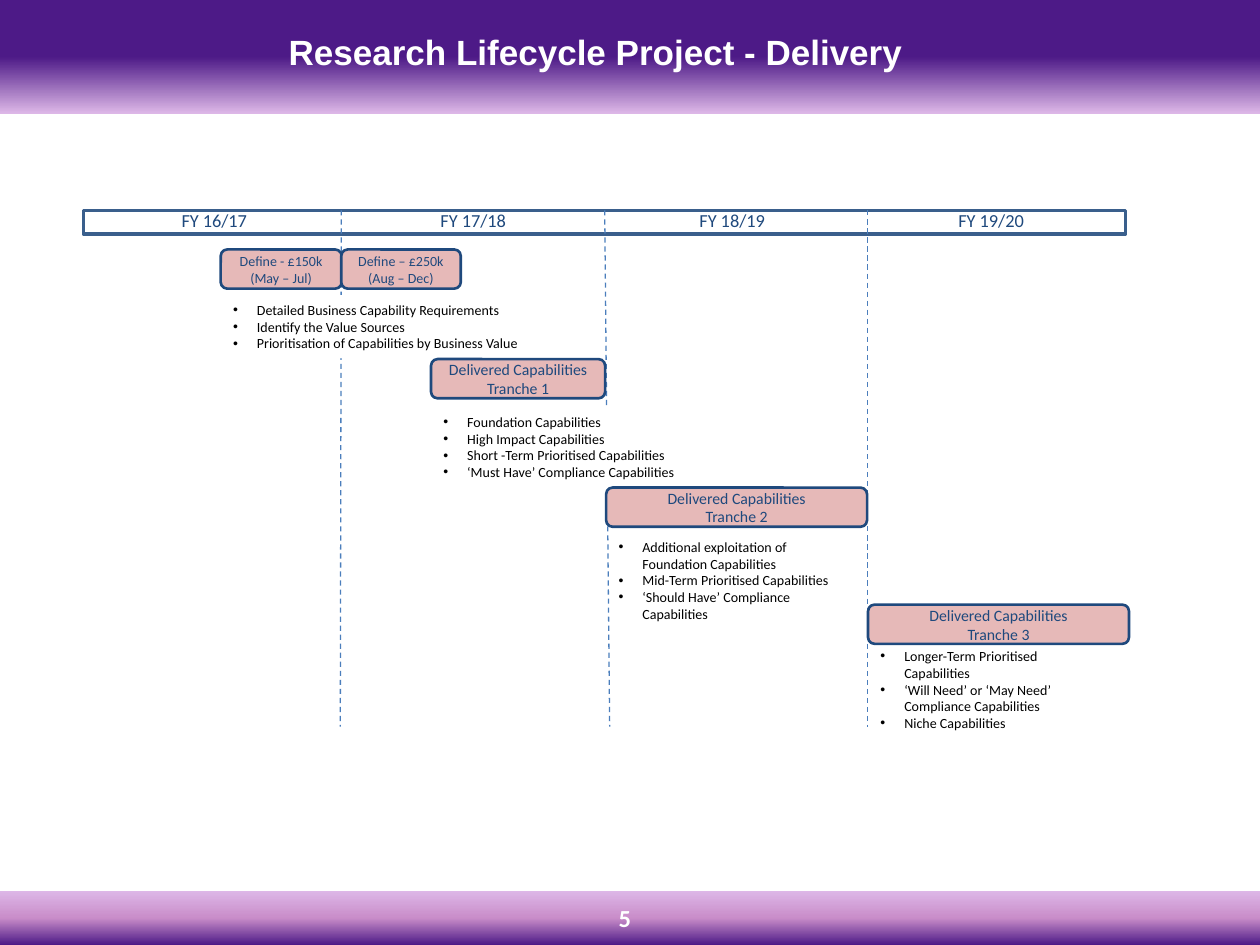
from copy import deepcopy

from lxml import etree
from pptx import Presentation
from pptx import util as u
from pptx.dml.color import RGBColor
from pptx.enum import dml, shapes, text
from pptx.oxml import ns

# Content: positions and sizes in centimetres
TITLE = "Research Lifecycle Project - Delivery"
PAGE_NUMBER = "5"
YEARS = ["FY 16/17", "FY 17/18", "FY 18/19", "FY 19/20"]
DIVIDERS = [(6.88, 6.86), (12.19, 12.29), (17.49, 17.49)]  # x at top, x at bottom
BARS = [  # top, height, gradient stops
    (17.96, 1.09, [(0, "DDB7E7"), (0.5, "C98DC9"), (1, "4D1A87")]),
    (0, 2.29, [(0, "4D1A87"), (0.5, "4D1A87"), (1, "DDB7E7")]),
]
STAGES = [  # left, top, width, font size, lines
    (4.45, 5.03, 2.44, 8, ["Define - £150k (May – Jul)"]),
    (6.88, 5.03, 2.41, 8, ["Define – £250k (Aug – Dec)"]),
    (8.69, 7.24, 3.51, 9, ["Delivered Capabilities", "Tranche 1"]),
    (12.22, 9.83, 5.26, 9, ["Delivered Capabilities", "Tranche 2"]),
    (17.5, 12.19, 5.26, 9, ["Delivered Capabilities", "Tranche 3"]),
]
NOTES = [  # left, top, width, height, fill, bullets
    (4.45, 5.95, 7.04, 1.27, "FFFFFF", [
        "Detailed Business Capability Requirements",
        "Identify the Value Sources",
        "Prioritisation of Capabilities by Business Value"]),
    (8.69, 8.21, 5.21, 1.63, "FFFFFF", [
        "Foundation Capabilities",
        "High Impact Capabilities",
        "Short -Term Prioritised Capabilities",
        "‘Must Have’ Compliance Capabilities"]),
    (12.22, 10.73, 4.85, 2.31, None, [
        "Additional exploitation of Foundation Capabilities",
        "Mid-Term Prioritised Capabilities",
        "‘Should Have’ Compliance Capabilities"]),
    (17.5, 12.93, 4.85, 2.31, None, [
        "Longer-Term Prioritised Capabilities",
        "‘Will Need’ or ‘May Need’ Compliance Capabilities",
        "Niche Capabilities"]),
]
NAVY, PINK, WHITE, BLACK = "1F497D", "E6B9B8", "FFFFFF", "000000"
TIMELINE_TOP, TIMELINE_BOTTOM, BAND_HEIGHT = 4.24, 14.65, 0.48
YEAR_LEFT, YEAR_TOP, YEAR_PITCH = 1.88, 4.09, 5.22
BULLET_INDENT = u.Cm(0.48)


def color(value):
    return RGBColor.from_string(value)


def add_box(page, kind, left, top, width, height, fill=None, line=None, weight=1.5):
    box = page.shapes.add_shape(kind, *map(u.Cm, (left, top, width, height)))
    box.shadow.inherit = False
    if fill:
        box.fill.solid()
        box.fill.fore_color.rgb = color(fill)
    else:
        box.fill.background()
    if line:
        box.line.color.rgb = color(line)
        box.line.width = u.Pt(weight)
    else:
        box.line.fill.background()
    return box


def add_gradient(box, stops):
    box.fill.gradient()
    box.fill.gradient_angle = 270
    stop_list = box._element.spPr.find(".//" + ns.qn("a:gsLst"))
    stop_list.append(deepcopy(stop_list[0]))
    for stop, (position, value) in zip(box.fill.gradient_stops, stops):
        stop.position = position
        stop.color.rgb = color(value)


def write(box, lines, size, ink, font="Calibri", bold=False, align="LEFT",
          anchor="TOP", wrap=True, bullets=False):
    frame = box.text_frame
    frame.word_wrap = wrap
    frame.vertical_anchor = getattr(text.MSO_ANCHOR, anchor)
    frame.text = "\n".join(lines)
    for para in frame.paragraphs:
        para.alignment = getattr(text.PP_ALIGN, align)
        if bullets:
            properties = para._p.get_or_add_pPr()
            properties.set("marL", str(BULLET_INDENT))
            properties.set("indent", str(-BULLET_INDENT))
            face = etree.SubElement(properties, ns.qn("a:buFont"))
            face.set("typeface", "Arial")
            etree.SubElement(properties, ns.qn("a:buChar")).set("char", "•")
        para.font.name = font
        para.font.size = u.Pt(size)
        para.font.bold = bold
        para.font.color.rgb = color(ink)


def add_label(page, left, top, width, height, words, size, ink, **style):
    box = page.shapes.add_textbox(*map(u.Cm, (left, top, width, height)))
    write(box, [words], size, ink, **style)


def add_divider(page, top_x, bottom_x):
    line = page.shapes.add_connector(
        shapes.MSO_CONNECTOR.STRAIGHT,
        *map(u.Cm, (top_x, TIMELINE_TOP, bottom_x, TIMELINE_BOTTOM)))
    line.line.color.rgb = color("4B7EBC")
    line.line.width = u.Pt(0.75)
    line.line.dash_style = dml.MSO_LINE.DASH
    etree.SubElement(line._element.spPr, ns.qn("a:effectLst"))


def main():
    deck = Presentation()
    deck.slide_width, deck.slide_height = u.Cm(25.4), u.Cm(19.05)
    page = deck.slides.add_slide(deck.slide_layouts[6])
    rectangle = shapes.MSO_SHAPE.RECTANGLE
    rounded = shapes.MSO_SHAPE.ROUNDED_RECTANGLE

    # Header and footer
    for top, height, stops in BARS:
        add_gradient(add_box(page, rectangle, 0, top, 25.4, height), stops)
    add_label(page, 12.22, 18.08, 1.12, 0.86, PAGE_NUMBER, 14, WHITE,
              bold=True, wrap=False)
    add_label(page, 5.57, 0.5, 18.62, 1.37, TITLE, 20, WHITE,
              font="Arial", bold=True)

    # Year band with dividers
    add_box(page, rectangle, 1.68, TIMELINE_TOP, 21.01, BAND_HEIGHT,
            WHITE, "3A5F8C", 2)
    for index, year in enumerate(YEARS):
        add_label(page, YEAR_LEFT + index * YEAR_PITCH, YEAR_TOP, 4.88, 0.71, year,
                  10.5, NAVY, align="CENTER", anchor="MIDDLE")
    for top_x, bottom_x in DIVIDERS:
        add_divider(page, top_x, bottom_x)

    # Notes, then the stages above them
    for left, top, width, height, fill, bullets in NOTES:
        box = add_box(page, rectangle, left, top, width, height, fill)
        write(box, bullets, 8, BLACK, bullets=True)
    for left, top, width, size, lines in STAGES:
        box = add_box(page, rounded, left, top, width, 0.79, PINK, NAVY)
        write(box, lines, size, NAVY, align="CENTER", anchor="MIDDLE")

    deck.save("out.pptx")


if __name__ == "__main__":
    main()
